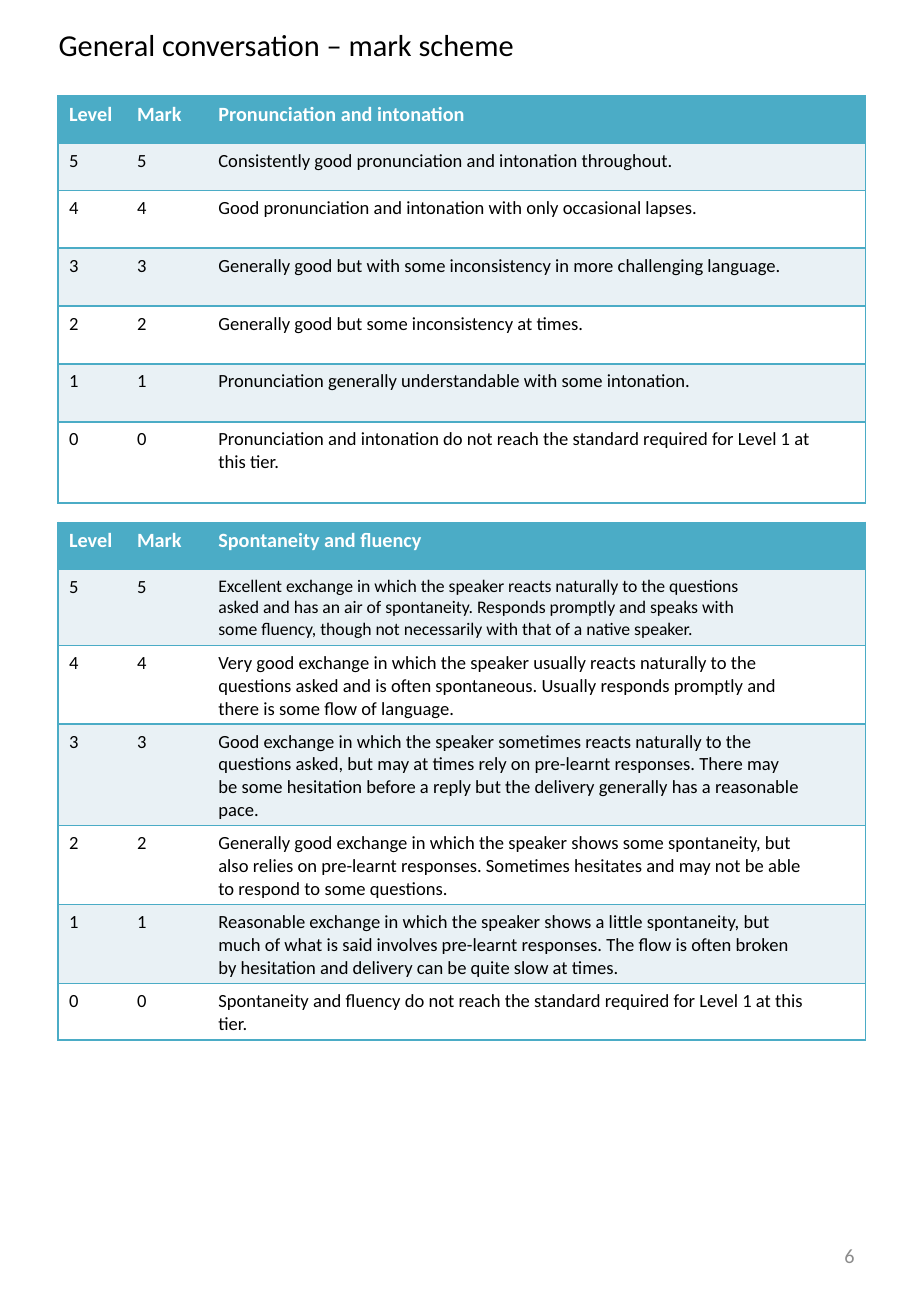
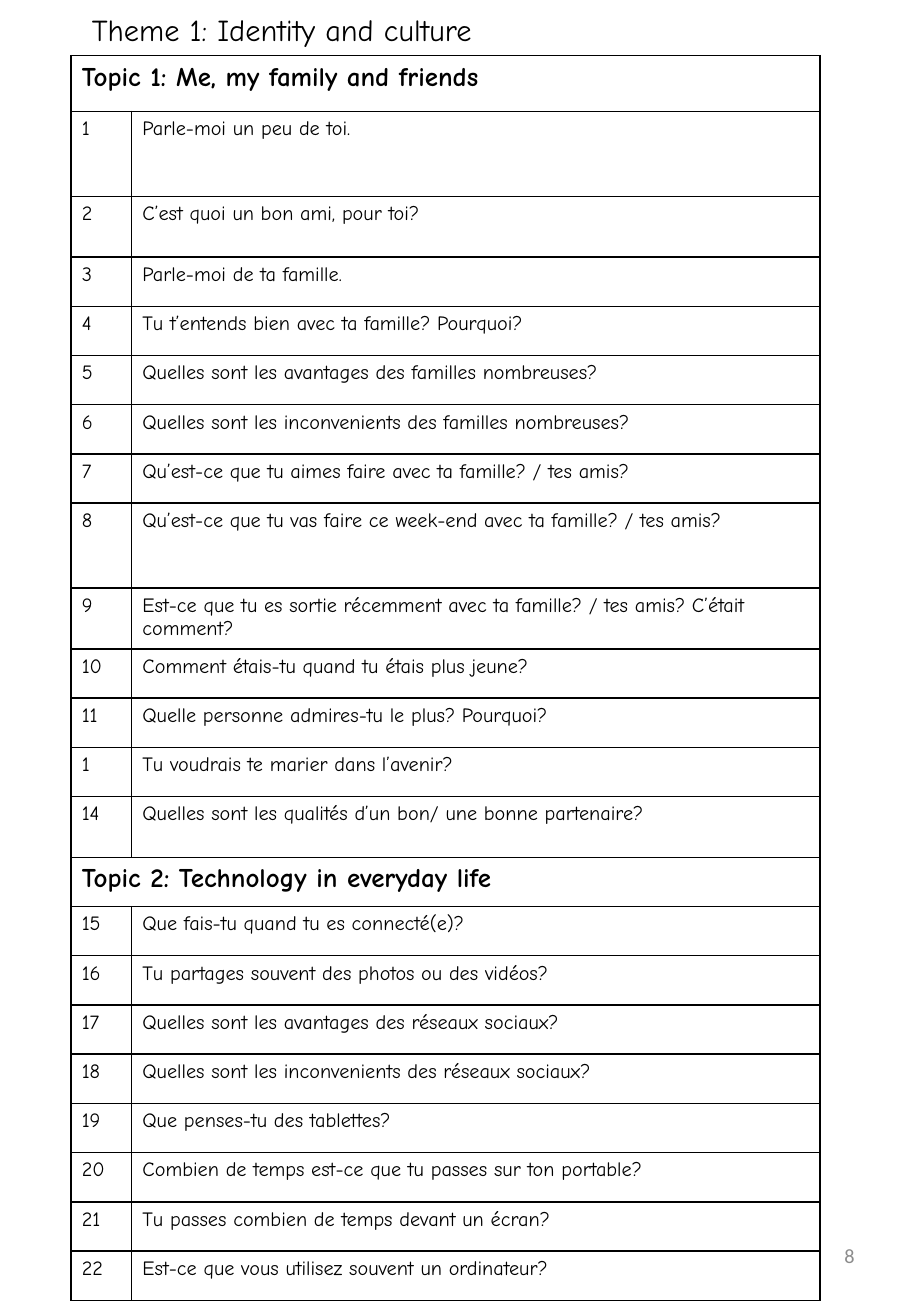
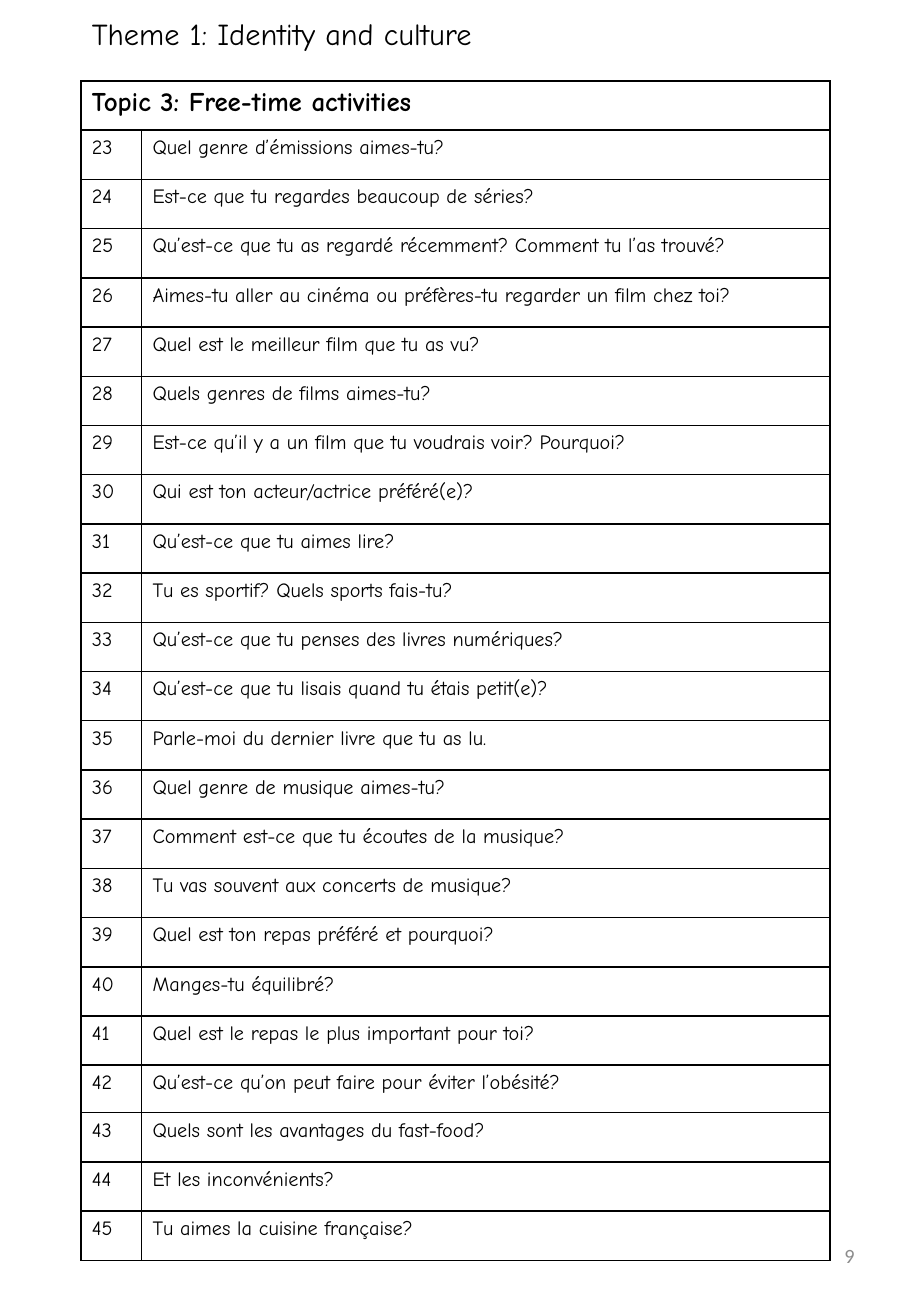
from lxml.etree import SubElement
from pptx import Presentation
from pptx.dml.color import RGBColor
from pptx.enum.text import MSO_ANCHOR, MSO_AUTO_SIZE, PP_ALIGN
from pptx.oxml.ns import qn
from pptx.util import Inches, Pt

# Page grid: 90 columns by 130 rows, twelve to the inch
COLUMNS, ROWS = 90, 130
TEAL, PALE, WHITE, BLACK, GREY = "4BACC6", "E9F1F5", "FFFFFF", "000000", "8C8C8C"
PLAIN, COMIC = "Calibri", "Comic Neue"
NUMBER_BOX = (64.5, 120.5, 21, 7)
MARK_COLUMNS = (0.56, 0.67, 5.42)
QUESTION_COLUMNS = (0.5, 5.67)

PRONUNCIATION = [
    "Consistently good pronunciation and intonation throughout.",
    "Good pronunciation and intonation with only occasional lapses.",
    "Generally good but with some inconsistency in more challenging language.",
    "Generally good but some inconsistency at times.",
    "Pronunciation generally understandable with some intonation.",
    "Pronunciation and intonation do not reach the standard required for Level 1 at\n"
    "this tier.",
]
SPONTANEITY = [
    "Excellent exchange in which the speaker reacts naturally to the questions\n"
    "asked and has an air of spontaneity. Responds promptly and speaks with\n"
    "some fluency, though not necessarily with that of a native speaker.",
    "Very good exchange in which the speaker usually reacts naturally to the\n"
    "questions asked and is often spontaneous. Usually responds promptly and\n"
    "there is some flow of language.",
    "Good exchange in which the speaker sometimes reacts naturally to the\n"
    "questions asked, but may at times rely on pre-learnt responses. There may\n"
    "be some hesitation before a reply but the delivery generally has a reasonable\n"
    "pace.",
    "Generally good exchange in which the speaker shows some spontaneity, but\n"
    "also relies on pre-learnt responses. Sometimes hesitates and may not be able\n"
    "to respond to some questions.",
    "Reasonable exchange in which the speaker shows a little spontaneity, but\n"
    "much of what is said involves pre-learnt responses. The flow is often broken\n"
    "by hesitation and delivery can be quite slow at times.",
    "Spontaneity and fluency do not reach the standard required for Level 1 at this\n"
    "tier.",
]
FAMILY = [
    "Parle-moi un peu de toi.",
    "C’est quoi un bon ami, pour toi?",
    "Parle-moi de ta famille.",
    "Tu t’entends bien avec ta famille? Pourquoi?",
    "Quelles sont les avantages des familles nombreuses?",
    "Quelles sont les inconvenients des familles nombreuses?",
    "Qu’est-ce que tu aimes faire avec ta famille? / tes amis?",
    "Qu’est-ce que tu vas faire ce week-end avec ta famille? / tes amis?",
    "Est-ce que tu es sortie récemment avec ta famille? / tes amis? C’était comment?",
    "Comment étais-tu quand tu étais plus jeune?",
    "Quelle personne admires-tu le plus? Pourquoi?",
    "Tu voudrais te marier dans l’avenir?",
    "Quelles sont les qualités d’un bon/ une bonne partenaire?",
]
TECHNOLOGY = [
    "Que fais-tu quand tu es connecté(e)?",
    "Tu partages souvent des photos ou des vidéos?",
    "Quelles sont les avantages des réseaux sociaux?",
    "Quelles sont les inconvenients des réseaux sociaux?",
    "Que penses-tu des tablettes?",
    "Combien de temps est-ce que tu passes sur ton portable?",
    "Tu passes combien de temps devant un écran?",
    "Est-ce que vous utilisez souvent un ordinateur?",
]
FREE_TIME = [
    "Quel genre d’émissions aimes-tu?",
    "Est-ce que tu regardes beaucoup de séries?",
    "Qu’est-ce que tu as regardé récemment? Comment tu l’as trouvé?",
    "Aimes-tu aller au cinéma ou préfères-tu regarder un film chez toi?",
    "Quel est le meilleur film que tu as vu?",
    "Quels genres de films aimes-tu?",
    "Est-ce qu’il y a un film que tu voudrais voir? Pourquoi?",
    "Qui est ton acteur/actrice préféré(e)?",
    "Qu’est-ce que tu aimes lire?",
    "Tu es sportif? Quels sports fais-tu?",
    "Qu’est-ce que tu penses des livres numériques?",
    "Qu’est-ce que tu lisais quand tu étais petit(e)?",
    "Parle-moi du dernier livre que tu as lu.",
    "Quel genre de musique aimes-tu?",
    "Comment est-ce que tu écoutes de la musique?",
    "Tu vas souvent aux concerts de musique?",
    "Quel est ton repas préféré et pourquoi?",
    "Manges-tu équilibré?",
    "Quel est le repas le plus important pour toi?",
    "Qu’est-ce qu’on peut faire pour éviter l’obésité?",
    "Quels sont les avantages du fast-food?",
    "Et les inconvénients?",
    "Tu aimes la cuisine française?",
]


def rgb(color):
    return RGBColor.from_string(color)


def grid(units):
    return Inches(units / 12)


def write(holder, text, size=12, font=PLAIN, color=BLACK, bold=False,
          align=PP_ALIGN.LEFT):
    """Fill a text frame or table cell; each line becomes a paragraph."""
    holder.margin_left = holder.margin_right = Inches(0.09)
    holder.margin_top, holder.margin_bottom = Inches(0.05), Inches(0.04)
    frame = getattr(holder, "text_frame", holder)
    frame.word_wrap = True
    frame.text = text
    for paragraph in frame.paragraphs:
        paragraph.alignment = align
        face = paragraph.font
        face.size, face.name, face.bold = Pt(size), font, bold
        face.color.rgb = rgb(color)


def style_cell(cell, fill, edges):
    """Set the fill and the borders; edges maps L, R, T, B to a colour or None."""
    properties = cell._tc.get_or_add_tcPr()
    for side in "LRTB":
        line = SubElement(properties, qn(f"a:ln{side}"), w=str(Pt(1)))
        if edges.get(side):
            paint = SubElement(line, qn("a:solidFill"))
            SubElement(paint, qn("a:srgbClr"), val=edges[side])
        else:
            SubElement(line, qn("a:noFill"))
    cell.fill.solid()
    cell.fill.fore_color.rgb = rgb(fill)


def add_grid_table(slide, box, row_count, widths, tall_rows):
    """Place a bare table; rows not in tall_rows share the height left over."""
    left, top, width, height = box
    table = slide.shapes.add_table(row_count, len(widths), *map(grid, box)).table
    table.first_row = table.horz_banding = False
    for column, share in zip(table.columns, widths):
        column.width = grid(width * share / sum(widths))
    even = (height - sum(tall_rows.values())) / (row_count - len(tall_rows))
    for index, row in enumerate(table.rows):
        row.height = grid(tall_rows.get(index, even))
    return table


def add_mark_table(slide, box, criterion, descriptors, tall_rows, sizes=None):
    rows = [("Level", "Mark", criterion)]
    rows += [(str(5 - i), str(5 - i), text) for i, text in enumerate(descriptors)]
    table = add_grid_table(slide, box, len(rows), MARK_COLUMNS, tall_rows)
    last = len(MARK_COLUMNS) - 1
    for r, row in enumerate(rows):
        fill = TEAL if r == 0 else PALE if r % 2 else WHITE
        for c, text in enumerate(row):
            cell = table.cell(r, c)
            style_cell(cell, fill, {"T": TEAL, "B": TEAL,
                                    "L": TEAL if c == 0 else None,
                                    "R": TEAL if c == last else None})
            if r == 0:
                write(cell, text, color=WHITE, bold=True)
            else:
                write(cell, text, size=(sizes or {}).get((r, c), 11))


def add_question_table(slide, box, topics, tall_rows):
    """Each topic is a heading, its question numbers and its questions."""
    rows = []
    for heading, numbers, questions in topics:
        rows += [(heading, None), *zip(map(str, numbers), questions)]
    table = add_grid_table(slide, box, len(rows), QUESTION_COLUMNS, tall_rows)
    for r, (first, question) in enumerate(rows):
        for c in range(2):
            style_cell(table.cell(r, c), WHITE, dict.fromkeys("LRTB", BLACK))
        if question is None:
            table.cell(r, 0).merge(table.cell(r, 1))
            write(table.cell(r, 0), first, size=16, font=COMIC, bold=True)
        else:
            write(table.cell(r, 0), first, font=COMIC)
            write(table.cell(r, 1), question, font=COMIC)


def add_page(deck, title, title_box, number, font):
    """Add a slide with its heading and page number."""
    slide = deck.slides.add_slide(deck.slide_layouts[5])
    heading = slide.shapes.title
    heading.left, heading.top, heading.width, heading.height = map(grid, title_box)
    heading.text_frame.auto_size = MSO_AUTO_SIZE.NONE
    heading.text_frame.vertical_anchor = MSO_ANCHOR.TOP
    write(heading.text_frame, title, size=18, font=font)
    page_number = slide.shapes.add_textbox(*map(grid, NUMBER_BOX)).text_frame
    page_number.vertical_anchor = MSO_ANCHOR.MIDDLE
    write(page_number, str(number), color=GREY, align=PP_ALIGN.RIGHT)
    return slide


def add_mark_scheme(deck):
    slide = add_page(deck, "General conversation – mark scheme",
                     (4.7, 2, 78, 4.8), 6, PLAIN)
    add_mark_table(slide, (5.75, 9.5, 79.75, 40.2), "Pronunciation and intonation",
                   PRONUNCIATION, {0: 4.65, 1: 4.65, 6: 8})
    add_mark_table(slide, (5.75, 51.6, 79.75, 51.15), "Spontaneity and fluency",
                   SPONTANEITY, {0: 4.65, 1: 7.5, 3: 10.03, 6: 5.6}, {(1, 2): 10.5})


def add_theme_page(deck, title_top, number, box, topics, tall_rows):
    slide = add_page(deck, "Theme 1: Identity and culture",
                     (8, title_top, 73, 5), number, COMIC)
    add_question_table(slide, box, topics, tall_rows)


def main():
    deck = Presentation()
    deck.slide_width, deck.slide_height = grid(COLUMNS), grid(ROWS)
    add_mark_scheme(deck)
    add_theme_page(
        deck, 0.5, 8, (7, 5.5, 74, 123),
        [("Topic 1: Me, my family and friends", [*range(1, 12), 1, 14], FAMILY),
         ("Topic 2: Technology in everyday life", range(15, 23), TECHNOLOGY)],
        {0: 5.5, 1: 8.4, 2: 6, 8: 8.4, 9: 6, 13: 6})
    add_theme_page(
        deck, 0.85, 9, (8, 8, 74, 116.6),
        [("Topic 3: Free-time activities", range(23, 46), FREE_TIME)], {20: 4.7})
    deck.save("out.pptx")


if __name__ == "__main__":
    main()
